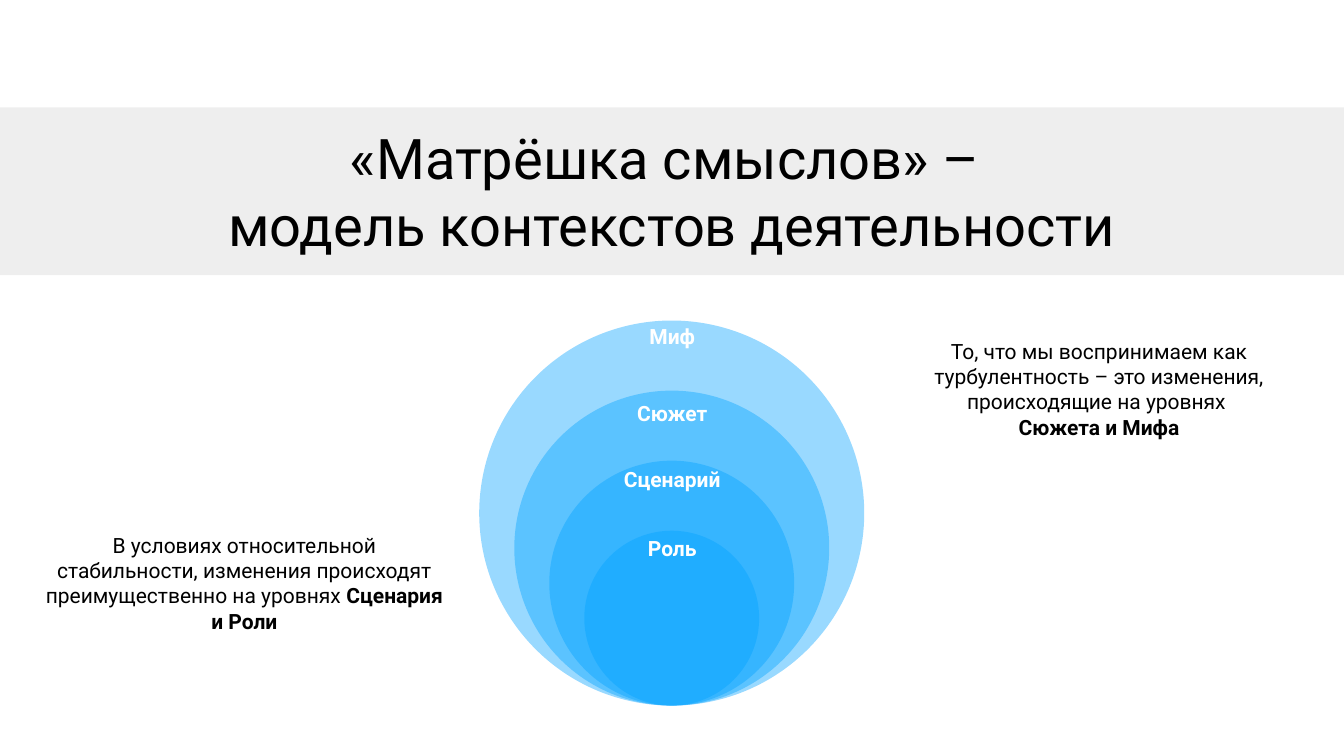
from lxml import etree
from pptx import Presentation
from pptx import util as u
from pptx.dml.color import RGBColor
from pptx.enum import shapes, text
from pptx.oxml.ns import qn

HUES = {"band": "5E5E5E", "ring": "00A2FF", "ink": "000000", "pale": "FFFFFF"}
FRAME = {
    "margin_left": u.Inches(0.06),
    "margin_right": u.Inches(0.06),
    "margin_top": u.Inches(0.06),
    "margin_bottom": u.Inches(0.06),
    "vertical_anchor": text.MSO_ANCHOR.MIDDLE,
}
LEVELS = [("Миф", 13.34, 6.67), ("Сюжет", 13.34, 8.19),
          ("Сценарий", 13.34, 9.51), ("Роль", 13.34, 10.87)]
NOTES = [
    ((0.73, 10.49, 8.24, 2.15),
     [("В условиях относительной стабильности, изменения происходят "
       "преимущественно на уровнях ", False), ("Сценария и Роли", True)]),
    ((17.69, 6.64, 8.24, 2.15),
     [("То, что мы воспринимаем как турбулентность – это изменения, "
       "происходящие на уровнях \n", False), ("Сюжета и Мифа", True)]),
]


def setall(item, vals):
    """Set each named value on the item."""
    for key, val in vals.items():
        setattr(item, key, val)


def inches(box):
    """Turn a box of numbers into lengths."""
    return [u.Inches(n) for n in box]


def tint(slide, kind, box, hue, alpha):
    """Add a see-through shape without a line."""
    form = slide.shapes.add_shape(kind, *inches(box))
    form.shadow.inherit = False
    form.line.fill.background()
    form.fill.solid()
    form.fill.fore_color.rgb = RGBColor.from_string(HUES[hue])
    color = form.element.spPr.find(".//" + qn("a:srgbClr"))
    etree.SubElement(color, qn("a:alpha"), val=str(alpha * 1000))


def write(frame, parts, size, hue, wrap=True, fit=text.MSO_AUTO_SIZE.NONE):
    """Fill a frame with one centred paragraph of (words, bold) parts."""
    setall(frame, {**FRAME, "word_wrap": wrap, "auto_size": fit})
    para = frame.paragraphs[0]
    para.alignment = text.PP_ALIGN.CENTER
    for words, bold in parts:
        for i, line in enumerate(words.split("\n")):
            if i:
                para.add_line_break()
            if line:
                run = para.add_run()
                run.text = line
                setall(run.font, {"name": "Roboto", "size": u.Pt(size), "bold": bold})
                run.font.color.rgb = RGBColor.from_string(HUES[hue])


def header(slide, box):
    """Place the grey band and the title upon it."""
    left, top, width, height = box
    tint(slide, shapes.MSO_SHAPE.RECTANGLE, box, "band", 10)
    title = slide.shapes.title
    place = inches((left + 1.85, top + 0.28, width - 3.7, height - 0.57))
    setall(title, dict(zip(("left", "top", "width", "height"), place)))
    title.element.getparent().append(title.element)
    write(title.text_frame,
          [("«Матрёшка смыслов» – \nмодель контекстов деятельности", False)], 80, "ink")


def nest(slide, box):
    """Place circles that share their lowest point, then their labels."""
    left, top, size, _ = box
    step = 1.39
    for i in range(len(LEVELS)):
        ring = (left + i * step / 2, top + i * step, size - i * step, size - i * step)
        tint(slide, shapes.MSO_SHAPE.OVAL, ring, "ring", 40)
    wide, high = 2.2, 0.61
    for name, mid, row in LEVELS:
        label = slide.shapes.add_textbox(
            *inches((mid - wide / 2, row - high / 2, wide, high)))
        write(label.text_frame, [(name, True)], 30, "pale", False,
              text.MSO_AUTO_SIZE.SHAPE_TO_FIT_TEXT)


def note(slide, box, parts):
    """Place one side remark."""
    frame = slide.shapes.add_textbox(*inches(box)).text_frame
    write(frame, parts, 30, "ink", fit=text.MSO_AUTO_SIZE.SHAPE_TO_FIT_TEXT)


def main():
    """Build the slide and save it."""
    deck = Presentation()
    setall(deck, {"slide_width": u.Inches(26.67), "slide_height": u.Inches(15)})
    slide = deck.slides.add_slide(deck.slide_layouts[5])
    header(slide, (0, 2.13, 26.67, 3.33))
    nest(slide, (9.51, 6.36, 7.64, 7.64))
    for box, parts in NOTES:
        note(slide, box, parts)
    deck.save("out.pptx")


if __name__ == "__main__":
    main()
